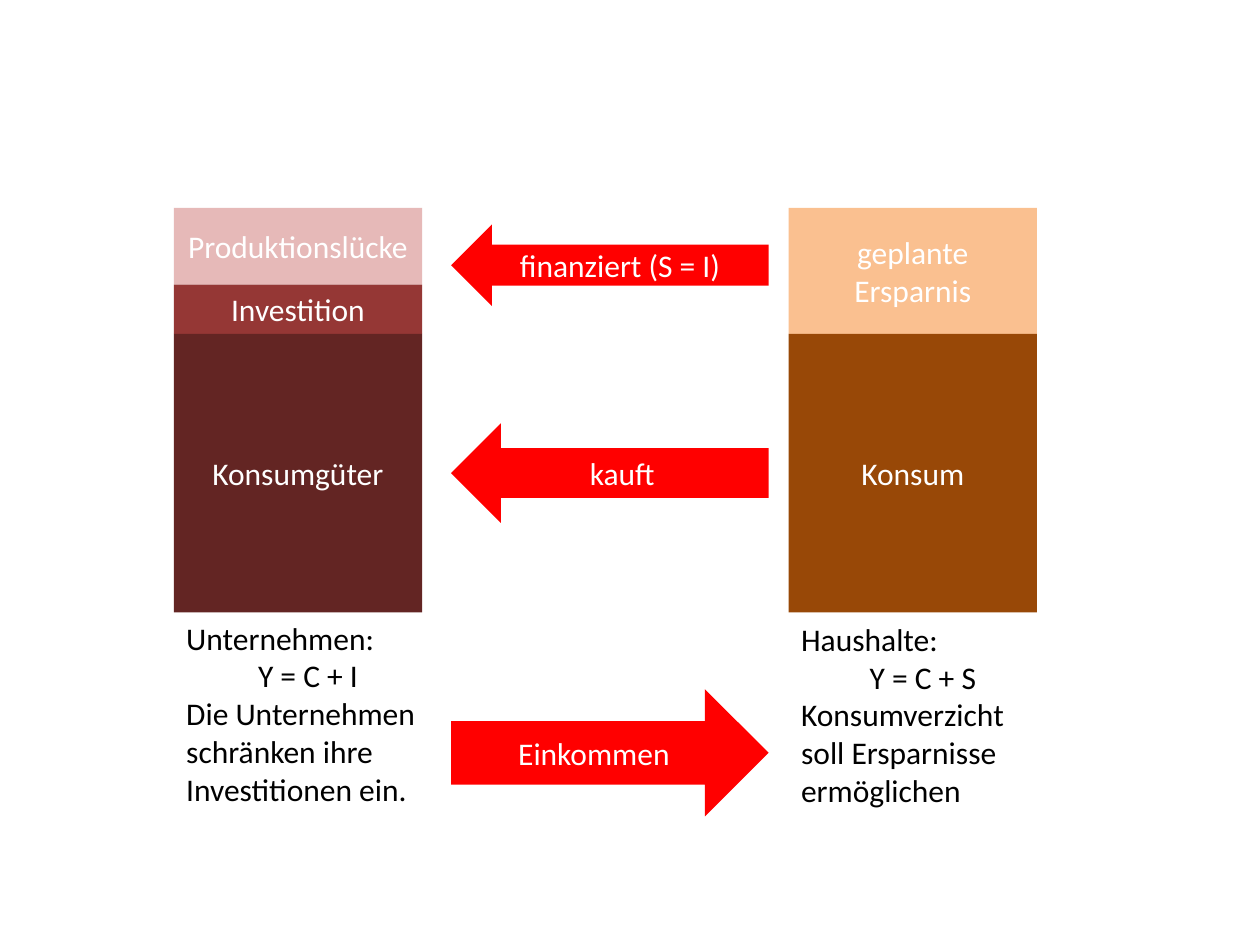
"""Build a slide on the flows between firms and households when planned saving exceeds investment."""
from pptx import Presentation
from pptx.dml.color import RGBColor
from pptx.enum.shapes import MSO_SHAPE as Preset
from pptx.enum.text import MSO_ANCHOR as Anchor, PP_ALIGN as Align
from pptx.util import Inches, Pt

COLORS = {
    "gap": "E6B9B8",
    "investment": "953735",
    "goods": "632523",
    "saving": "FAC090",
    "consumption": "984807",
    "flow": "FF0000",
    "light": "FFFFFF",
    "dark": "000000",
}
FIRMS_LEFT, FLOWS_LEFT, HOUSEHOLDS_LEFT = 1.38, 3.58, 6.26
COLUMN_TOP, COLUMN_WIDTH = 1.65, 1.97
FLOW_WIDTH, CAPTION_WIDTH = 2.52, 2.13


def write(frame, lines, color="light", anchor=Anchor.MIDDLE, aligns=(Align.CENTER,)):
    frame.word_wrap = True
    frame.vertical_anchor = anchor
    frame.text = "\n".join(lines)
    for paragraph, align in zip(frame.paragraphs, aligns):
        paragraph.alignment = align
        paragraph.font.name = "Calibri"
        paragraph.font.size = Pt(18)
        paragraph.font.color.rgb = RGBColor.from_string(COLORS[color])


def add_block(preset, left, top, width, height, color, label):
    block = slide.shapes.add_shape(preset, Inches(left), Inches(top), Inches(width), Inches(height))
    block.shadow.inherit = False
    block.fill.solid()
    block.fill.fore_color.rgb = RGBColor.from_string(COLORS[color])
    block.line.fill.background()
    write(block.text_frame, [label])


deck = Presentation()
deck.slide_width, deck.slide_height = Inches(10), Inches(7.5)
slide = deck.slides.add_slide(deck.slide_layouts[6])

columns = [
    (FIRMS_LEFT, [
        (0.61, "gap", "Produktionslücke"),
        (0.39, "investment", "Investition"),
        (2.21, "goods", "Konsumgüter"),
    ]),
    (HOUSEHOLDS_LEFT, [
        (1.0, "saving", "geplante Ersparnis"),
        (2.21, "consumption", "Konsum"),
    ]),
]
for left, parts in columns:
    top = COLUMN_TOP
    for height, color, label in parts:
        add_block(Preset.RECTANGLE, left, top, COLUMN_WIDTH, height, color, label)
        top += height

flows = [
    (Preset.LEFT_ARROW, 1.78, 0.65, "finanziert (S = I)"),
    (Preset.LEFT_ARROW, 3.36, 0.79, "kauft"),
    (Preset.RIGHT_ARROW, 5.47, 1.01, "Einkommen"),
]
for preset, top, height, label in flows:
    add_block(preset, FLOWS_LEFT, top, FLOW_WIDTH, height, "flow", label)

captions = [
    (FIRMS_LEFT, 4.86, 1.62,
     ["Unternehmen:", "Y = C + I", "Die Unternehmen schränken ihre Investitionen ein."]),
    (HOUSEHOLDS_LEFT, 4.87, 1.92,
     ["Haushalte:", "Y = C + S", "Konsumverzicht soll Ersparnisse ermöglichen"]),
]
for left, top, height, lines in captions:
    caption = slide.shapes.add_textbox(Inches(left), Inches(top), Inches(CAPTION_WIDTH), Inches(height))
    write(caption.text_frame, lines, color="dark", anchor=Anchor.TOP,
          aligns=(Align.LEFT, Align.CENTER, Align.LEFT))

deck.save("out.pptx")
